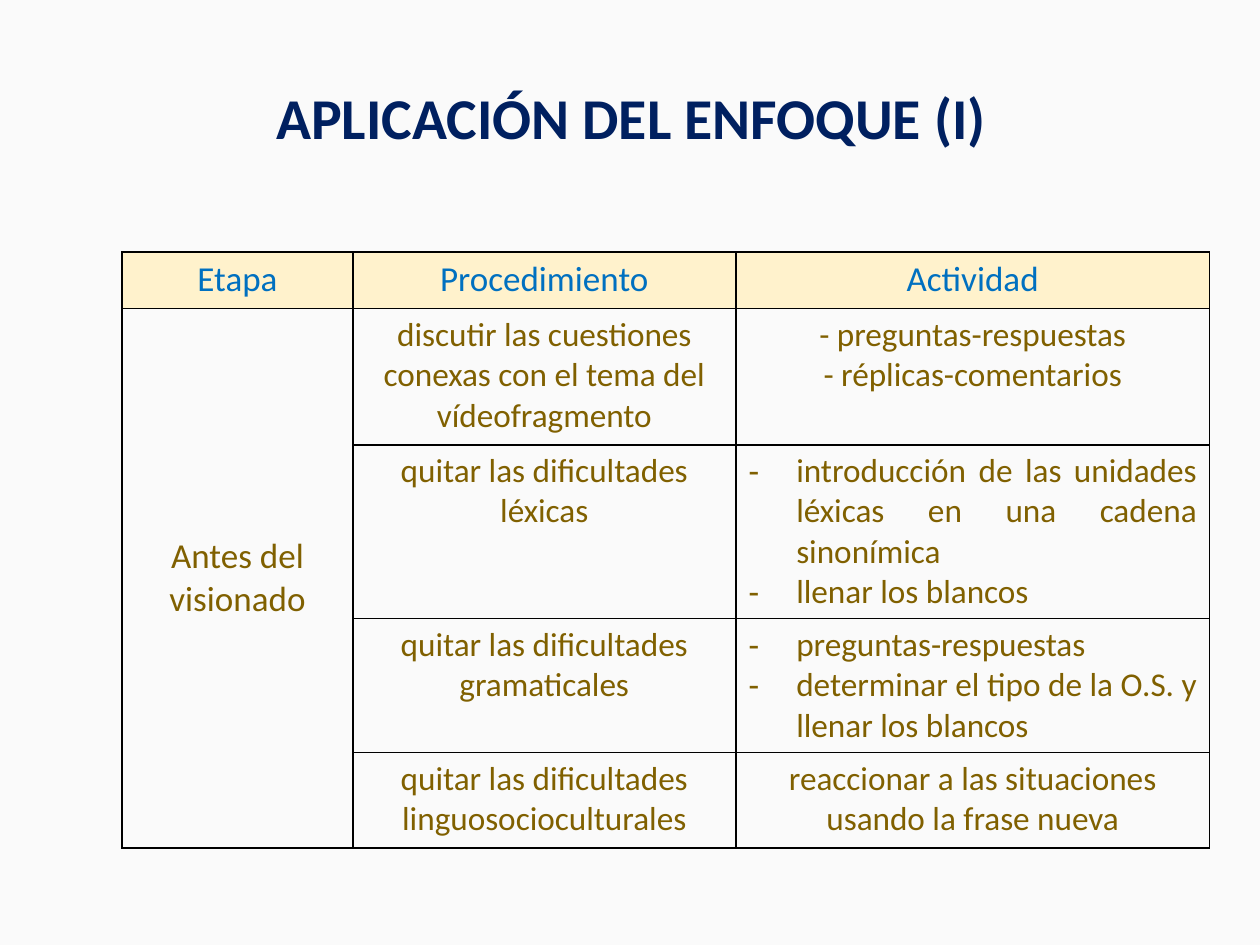
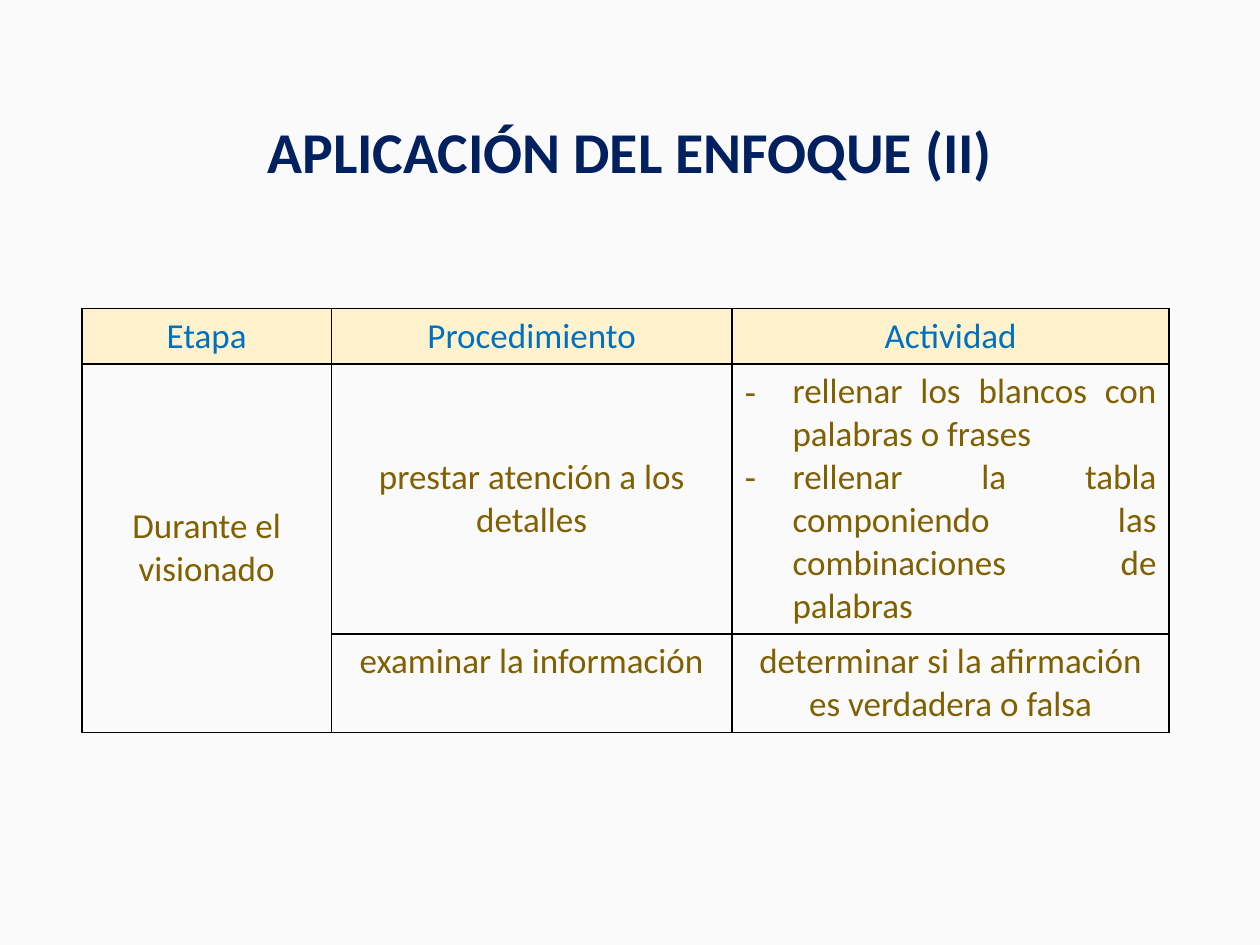
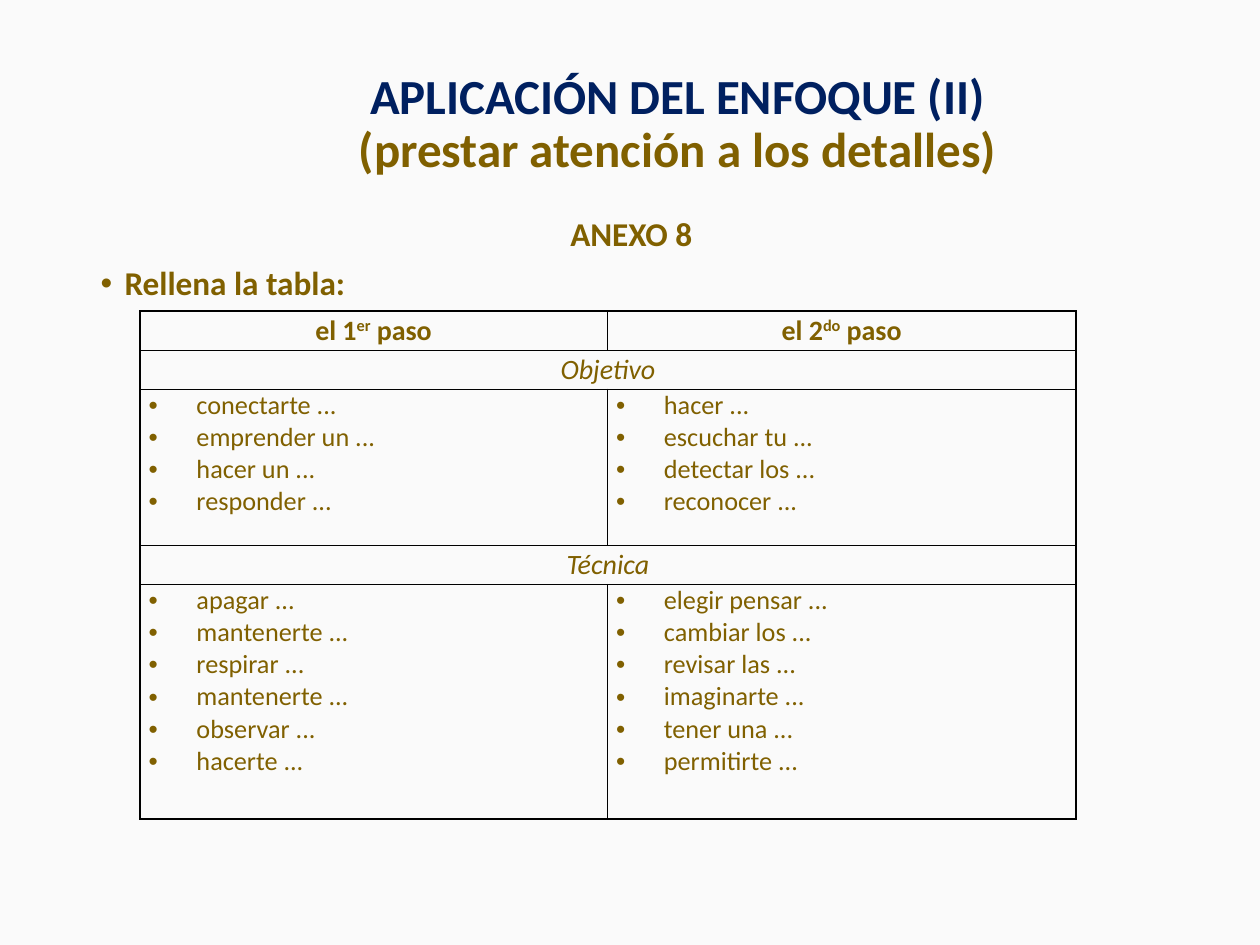
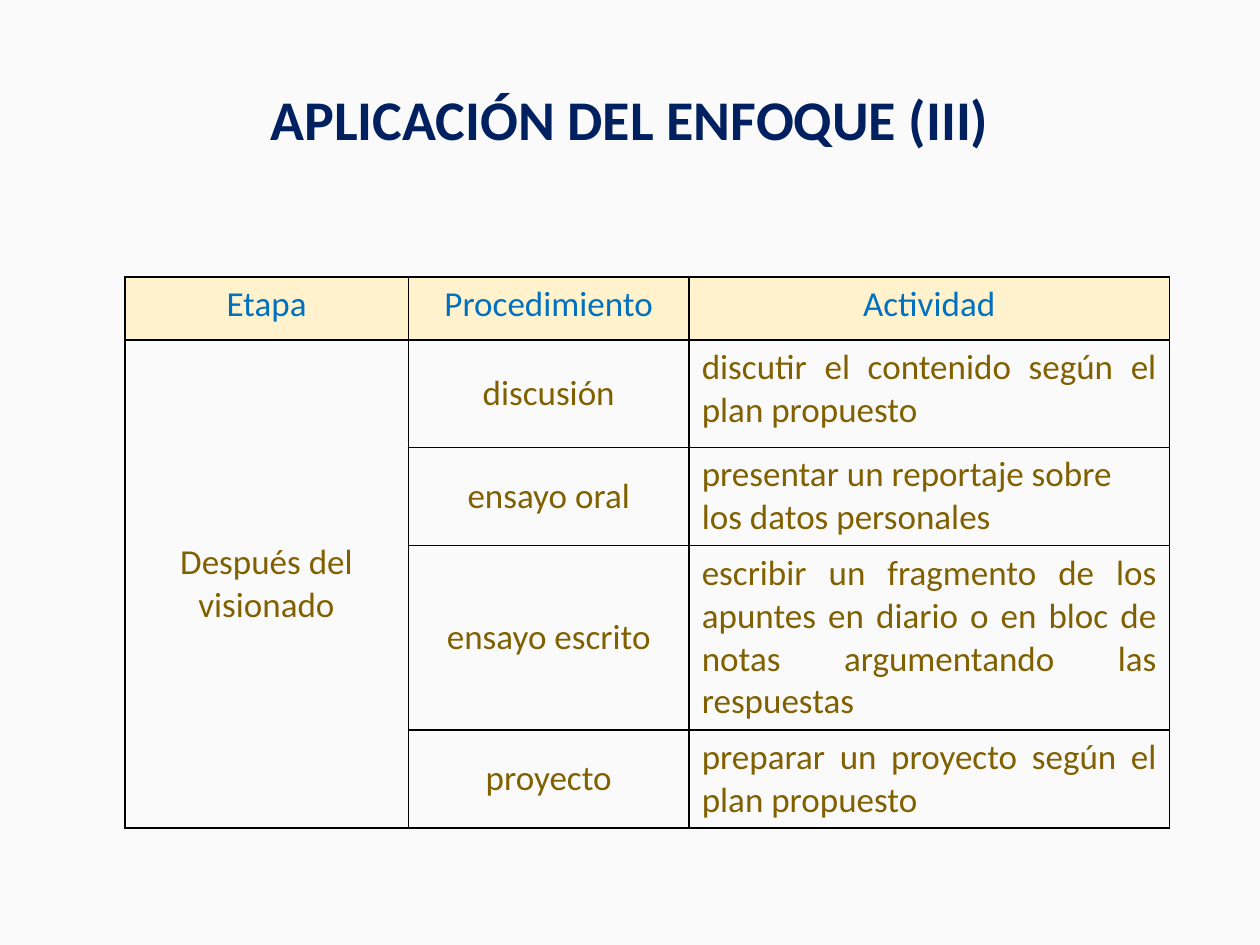
from dataclasses import dataclass

from lxml import etree
from pptx import Presentation
from pptx.dml.color import RGBColor
from pptx.enum.text import MSO_ANCHOR, MSO_AUTO_SIZE, PP_ALIGN
from pptx.oxml.ns import qn
from pptx.util import Inches, Pt

LEFT, CENTER, JUSTIFY = PP_ALIGN.LEFT, PP_ALIGN.CENTER, PP_ALIGN.JUSTIFY
TOP, MIDDLE = MSO_ANCHOR.TOP, MSO_ANCHOR.MIDDLE

FONT = "Calibri"
PAPER, NAVY, BROWN = "FAFAFA", "002060", "806000"
BLUE, CREAM, BLACK = "0070C0", "FFF2CC", "000000"
TITLE = "APLICACIÓN DEL ENFOQUE"
HEADINGS = ("Etapa", "Procedimiento", "Actividad")
STAGE_SIZE = 20
TITLE_ONLY = 5


@dataclass
class Entry:
    """Paragraphs of a table cell and how they are set."""
    lines: tuple
    align: PP_ALIGN = CENTER
    anchor: MSO_ANCHOR = TOP
    bullet: str = ""
    size: float = STAGE_SIZE
    color: str = BROWN
    bold: bool = False
    italic: bool = False


def rgb(value):
    return RGBColor.from_string(value)


def set_font(para, size, color, bold=False, italic=False):
    font = para.font
    font.name, font.size = FONT, Pt(size)
    font.bold, font.italic = bold, italic
    font.color.rgb = rgb(color)


def set_bullet(para, mark, indent):
    props = para._p.get_or_add_pPr()
    props.set("marL", str(Inches(indent)))
    props.set("indent", str(-Inches(indent)))
    etree.SubElement(props, qn("a:buFont"), typeface="Arial")
    etree.SubElement(props, qn("a:buChar"), char=mark)


def add_spans(para, text):
    """Write text; parts between carets are raised."""
    for index, part in enumerate(text.split("^")):
        span = para.add_run()
        span.text = part
        if index % 2:
            span._r.get_or_add_rPr().set("baseline", "30000")


def draw_borders(cell):
    props = cell._tc.get_or_add_tcPr()
    for index, side in enumerate(("lnL", "lnR", "lnT", "lnB")):
        line = etree.Element(qn(f"a:{side}"), w=str(Pt(1)))
        fill = etree.SubElement(line, qn("a:solidFill"))
        etree.SubElement(fill, qn("a:srgbClr"), val=BLACK)
        props.insert(index, line)


def write_cell(cell, entry):
    cell.vertical_anchor = entry.anchor
    frame = cell.text_frame
    for index, line in enumerate(entry.lines):
        para = frame.add_paragraph() if index else frame.paragraphs[0]
        para.alignment = entry.align
        if entry.bullet:
            set_bullet(para, entry.bullet, 0.38)
        set_font(para, entry.size, entry.color, entry.bold, entry.italic)
        add_spans(para, line)


def add_grid(page, left, top, widths, heights):
    """Add an unfilled table with thin black borders."""
    table = page.shapes.add_table(
        len(heights), len(widths), Inches(left), Inches(top),
        Inches(sum(widths)), Inches(sum(heights))).table
    table.first_row = table.horz_banding = False
    for column, width in zip(table.columns, widths):
        column.width = Inches(width)
    for row, height in zip(table.rows, heights):
        row.height = Inches(height)
    for cell in table.iter_cells():
        cell.fill.background()
        draw_borders(cell)
    return table


def add_page(deck, number, box, size, subtitle="", indent=0):
    """Add a slide with the shared title, moved to box."""
    page = deck.slides.add_slide(deck.slide_layouts[TITLE_ONLY])
    title = page.shapes.title
    title.left, title.top, title.width, title.height = map(Inches, box)
    frame = title.text_frame
    frame.auto_size, frame.word_wrap = MSO_AUTO_SIZE.NONE, True
    frame.vertical_anchor = MIDDLE
    para = frame.paragraphs[0]
    para.alignment, para.line_spacing = CENTER, 0.9
    if indent:
        para._p.get_or_add_pPr().set("marL", str(Inches(indent)))
    set_font(para, size, NAVY, bold=True)
    add_spans(para, f"{TITLE} ({number})")
    if subtitle:
        para.add_line_break()
        span = para.add_run()
        span.text = subtitle
        span.font.color.rgb = rgb(BROWN)
    return page


def add_stage_table(page, left, top, widths, heights, stage, rows):
    """Add a table of one stage with its procedures and activities."""
    table = add_grid(page, left, top, widths, heights)
    for column, heading in enumerate(HEADINGS):
        cell = table.cell(0, column)
        cell.fill.solid()
        cell.fill.fore_color.rgb = rgb(CREAM)
        write_cell(cell, Entry((heading,), color=BLUE))
    table.cell(1, 0).merge(table.cell(len(rows), 0))
    write_cell(table.cell(1, 0), Entry((stage,), anchor=MIDDLE))
    for row, entries in enumerate(rows, start=1):
        for column, entry in enumerate(entries, start=1):
            write_cell(table.cell(row, column), entry)


def build_before(deck):
    page = add_page(deck, "I", (0.7, 0.51, 8.62, 0.9), 33)
    rows = [
        ("discutir las cuestiones conexas con el tema del vídeofragmento",
         ("- preguntas-respuestas", "- réplicas-comentarios"), False),
        ("quitar las dificultades léxicas",
         ("introducción de las unidades léxicas en una cadena sinonímica",
          "llenar los blancos"), True),
        ("quitar las dificultades gramaticales",
         ("preguntas-respuestas",
          "determinar el tipo de la O.S. y llenar los blancos"), True),
        ("quitar las dificultades linguosocioculturales",
         ("reaccionar a las situaciones usando la frase nueva",), False),
    ]
    entries = [
        (Entry((procedure,), size=19),
         Entry(activities, JUSTIFY if listed else CENTER,
               bullet="-" if listed else "", size=19))
        for procedure, activities, listed in rows]
    add_stage_table(page, 0.97, 2, (1.83, 3.04, 3.76),
                    (0.45, 1.08, 1.38, 1.06, 0.76),
                    "Antes del visionado", entries)


def build_during(deck):
    page = add_page(deck, "II", (0.69, 0.86, 8.62, 0.73), 33)
    tasks = ("rellenar los blancos con palabras o frases",
             "rellenar la tabla componiendo las combinaciones de palabras")
    check = "determinar si la afirmación es verdadera o falsa"
    entries = [
        (Entry(("prestar atención a los detalles",), anchor=MIDDLE),
         Entry(tasks, JUSTIFY, MIDDLE, "-")),
        (Entry(("examinar la información",)),
         Entry((check,), anchor=MIDDLE)),
    ]
    add_stage_table(page, 0.65, 2.45, (1.98, 3.18, 3.47),
                    (0.44, 2.14, 0.78), "Durante el visionado", entries)


def add_instruction(page, left, top, width, height):
    box = page.shapes.add_textbox(*map(Inches, (left, top, width, height)))
    frame = box.text_frame
    frame.word_wrap = True
    heading, task = frame.paragraphs[0], frame.add_paragraph()
    heading.alignment = CENTER
    task.space_before = Pt(7.5)
    for para in (heading, task):
        para.line_spacing = 0.9
    set_bullet(task, "•", 0.19)
    for para, text in ((heading, "ANEXO 8"), (task, "Rellena la tabla:")):
        set_font(para, 19, BROWN, bold=True)
        add_spans(para, text)


def add_steps_table(page, left, top):
    """Add the two-step table with a full-width row above each list."""
    sections = [
        ("Objetivo",
         ("conectarte ...", "emprender un ...", "hacer un ...",
          "responder ..."),
         ("hacer ...", "escuchar tu ...", "detectar los ...",
          "reconocer ...")),
        ("Técnica",
         ("apagar ...", "mantenerte ...", "respirar ...",
          "mantenerte ...", "observar ...", "hacerte ..."),
         ("elegir pensar ...", "cambiar los ...", "revisar las ...",
          "imaginarte ...", "tener una ...", "permitirte ...")),
    ]
    table = add_grid(page, left, top, (3.71, 3.72),
                     (0.31, 0.31, 1.24, 0.31, 1.86))
    for cell in table.iter_cells():
        cell.margin_left = cell.margin_right = Inches(0.07)
        cell.margin_top = cell.margin_bottom = 0
    for column, step in enumerate(("el 1^er^ paso", "el 2^do^ paso")):
        write_cell(table.cell(0, column),
                   Entry((step,), anchor=MIDDLE, size=16, bold=True))
    for index, (name, *lists) in enumerate(sections):
        row = 1 + 2 * index
        table.cell(row, 0).merge(table.cell(row, 1))
        write_cell(table.cell(row, 0),
                   Entry((name,), anchor=MIDDLE, size=16, italic=True))
        for column, lines in enumerate(lists):
            write_cell(table.cell(row + 1, column),
                       Entry(lines, JUSTIFY, bullet="•", size=15))


def build_annex(deck):
    page = add_page(deck, "II", (0.69, 0.4, 8.62, 1.18), 28,
                    "(prestar atención a los detalles)", indent=0.75)
    add_instruction(page, 0.7, 1.68, 8.62, 0.75)
    add_steps_table(page, 1.11, 2.47)


def build_after(deck):
    page = add_page(deck, "III", (0.69, 0.4, 8.62, 1.15), 32)
    rows = [
        ("discusión", "discutir el contenido según el plan propuesto",
         JUSTIFY),
        ("ensayo oral", "presentar un reportaje sobre los datos personales",
         LEFT),
        ("ensayo escrito",
         "escribir un fragmento de los apuntes en diario o en bloc de notas "
         "argumentando las respuestas", JUSTIFY),
        ("proyecto", "preparar un proyecto según el plan propuesto", JUSTIFY),
    ]
    entries = [(Entry((procedure,), anchor=MIDDLE), Entry((activity,), align))
               for procedure, activity, align in rows]
    add_stage_table(page, 0.99, 2.2, (2.25, 2.23, 3.81),
                    (0.5, 0.85, 0.78, 1.46, 0.78),
                    "Después del visionado", entries)


def main():
    deck = Presentation()
    deck.slide_width, deck.slide_height = Inches(10), Inches(7.5)
    paper = deck.slide_master.background.fill
    paper.solid()
    paper.fore_color.rgb = rgb(PAPER)
    for build in (build_before, build_during, build_annex, build_after):
        build(deck)
    deck.save("out.pptx")


if __name__ == "__main__":
    main()
